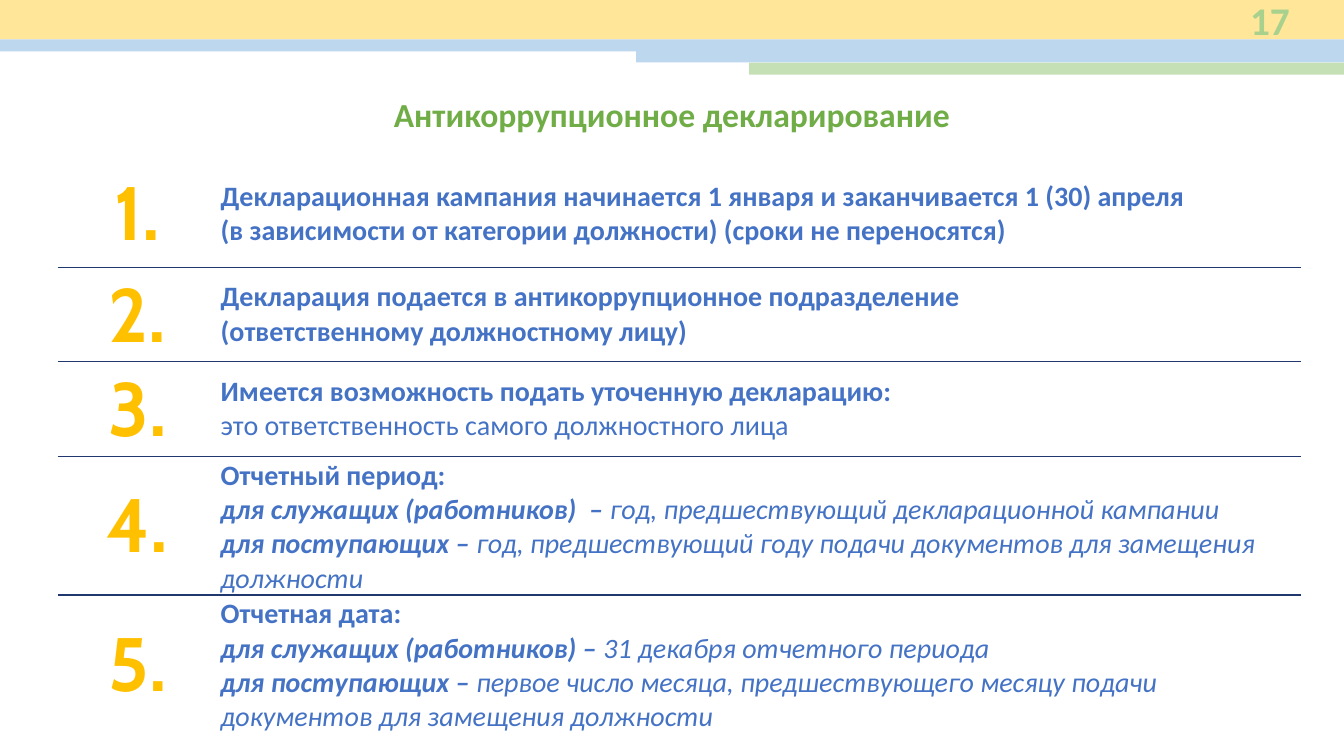
"""Build the slide on anti-corruption declarations: header bands, title and numbered table."""
from lxml import etree
from pptx import Presentation
from pptx.dml.color import RGBColor
from pptx.enum import shapes, text
from pptx.oxml import ns
from pptx.util import Inches, Pt

YELLOW = RGBColor(0xFF, 0xE6, 0x99)
PALE_BLUE = RGBColor(0xBD, 0xD7, 0xEE)
PALE_GREEN = RGBColor(0xC5, 0xE0, 0xB4)
PAGE_GREEN = RGBColor(0xA9, 0xD1, 0x8E)
TITLE_GREEN = RGBColor(0x70, 0xAD, 0x47)
GOLD = RGBColor(0xFF, 0xC0, 0x00)
BLUE = RGBColor(0x44, 0x72, 0xC4)
NAVY = RGBColor(0x21, 0x38, 0x6F)
WHITE = RGBColor(0xFF, 0xFF, 0xFF)

BANDS = [
    (0, 0, 0.39, YELLOW),
    (0, 0.39, 0.12, PALE_BLUE),
    (6.31, 0.5, 0.12, PALE_BLUE),
    (7.43, 0.62, 0.12, PALE_GREEN),
]
LABELS = [
    ("17", (11.93, 0, 0.96, 0.39), 28, PAGE_GREEN, text.PP_ALIGN.RIGHT, text.MSO_ANCHOR.MIDDLE),
    ("Антикоррупционное декларирование", (0.6, 0.88, 12.13, 0.5), 24, TITLE_GREEN,
     text.PP_ALIGN.CENTER, text.MSO_ANCHOR.TOP),
]
PLAIN, BOLD, ITALIC, BOLD_ITALIC = (False, False), (True, False), (False, True), (True, True)
BREAK = ("\n", PLAIN)
ITEMS = [
    [[("Декларационная кампания начинается 1 января и заканчивается 1 (30) апреля", BOLD), BREAK,
      ("(в зависимости от категории должности) (сроки не переносятся)", BOLD)]],
    [[("Декларация подается в антикоррупционное подразделение", BOLD), BREAK,
      ("(ответственному должностному лицу)", BOLD)]],
    [[("Имеется возможность подать уточенную декларацию:", BOLD), BREAK,
      ("это ответственность самого должностного лица", PLAIN)]],
    [[("Отчетный период:", BOLD)],
     [("для служащих (работников)  – ", BOLD_ITALIC),
      ("год, предшествующий декларационной кампании", ITALIC)],
     [("для поступающих – ", BOLD_ITALIC),
      ("год, предшествующий году подачи документов для замещения должности", ITALIC)]],
    [[("Отчетная дата:", BOLD)],
     [("для служащих (работников) – ", BOLD_ITALIC),
      ("31 декабря отчетного периода", ITALIC)],
     [("для поступающих – ", BOLD_ITALIC),
      ("первое число месяца, предшествующего месяцу подачи документов для замещения должности",
       ITALIC)]],
]


def set_font(para, name, size, color):
    para.font.name = name
    para.font.size = Pt(size)
    para.font.color.rgb = color


def add_rule(cell, side):
    line = etree.SubElement(cell._tc.get_or_add_tcPr(), ns.qn(f"a:ln{side}"), w=str(Pt(1)))
    fill = etree.SubElement(line, ns.qn("a:solidFill"))
    etree.SubElement(fill, ns.qn("a:srgbClr"), val=str(NAVY))


deck = Presentation()
deck.slide_width, deck.slide_height = Inches(13.33), Inches(7.5)
page = deck.slides.add_slide(deck.slide_layouts[6])

for left, top, height, color in BANDS:
    band = page.shapes.add_shape(shapes.MSO_SHAPE.RECTANGLE, Inches(left), Inches(top),
                                 Inches(13.33 - left), Inches(height))
    band.shadow.inherit = False
    band.fill.solid()
    band.fill.fore_color.rgb = color
    band.line.fill.background()

for words, place, size, color, align, anchor in LABELS:
    box = page.shapes.add_textbox(*map(Inches, place))
    box.text_frame.word_wrap = True
    box.text_frame.vertical_anchor = anchor
    para = box.text_frame.paragraphs[0]
    para.text = words
    para.alignment = align
    set_font(para, "Calibri", size, color)
    para.font.bold = True

frame = page.shapes.add_table(len(ITEMS), 2, Inches(0.58), Inches(1.59),
                              Inches(12.32), Inches(5.7))
table = frame.table
table.first_row = table.horz_banding = False
table.columns[0].width, table.columns[1].width = Inches(1.57), Inches(10.75)

for index, paragraphs in enumerate(ITEMS):
    table.rows[index].height = Inches(0.79 if index else 1.06)
    number, wording = table.cell(index, 0), table.cell(index, 1)
    for cell in (number, wording):
        if index > 0:
            add_rule(cell, "T")
        if index < len(ITEMS) - 1:
            add_rule(cell, "B")
        cell.fill.solid()
        cell.fill.fore_color.rgb = WHITE
        cell.vertical_anchor = text.MSO_ANCHOR.MIDDLE
        cell.margin_left = cell.margin_right = Inches(0.04)
        cell.margin_top = cell.margin_bottom = Inches(0.02)

    para = number.text_frame.paragraphs[0]
    para.text = f"{index + 1}."
    para.alignment = text.PP_ALIGN.CENTER
    set_font(para, "Cabin", 54, GOLD)
    para.font.bold = True

    for position, pieces in enumerate(paragraphs):
        body = wording.text_frame
        para = body.add_paragraph() if position else body.paragraphs[0]
        set_font(para, "Calibri", 20, BLUE)
        for piece in pieces:
            if piece == BREAK:
                para.add_line_break()
                continue
            span = para.add_run()
            span.text, (span.font.bold, span.font.italic) = piece

frame.height = Inches(5.7)
deck.save("out.pptx")
